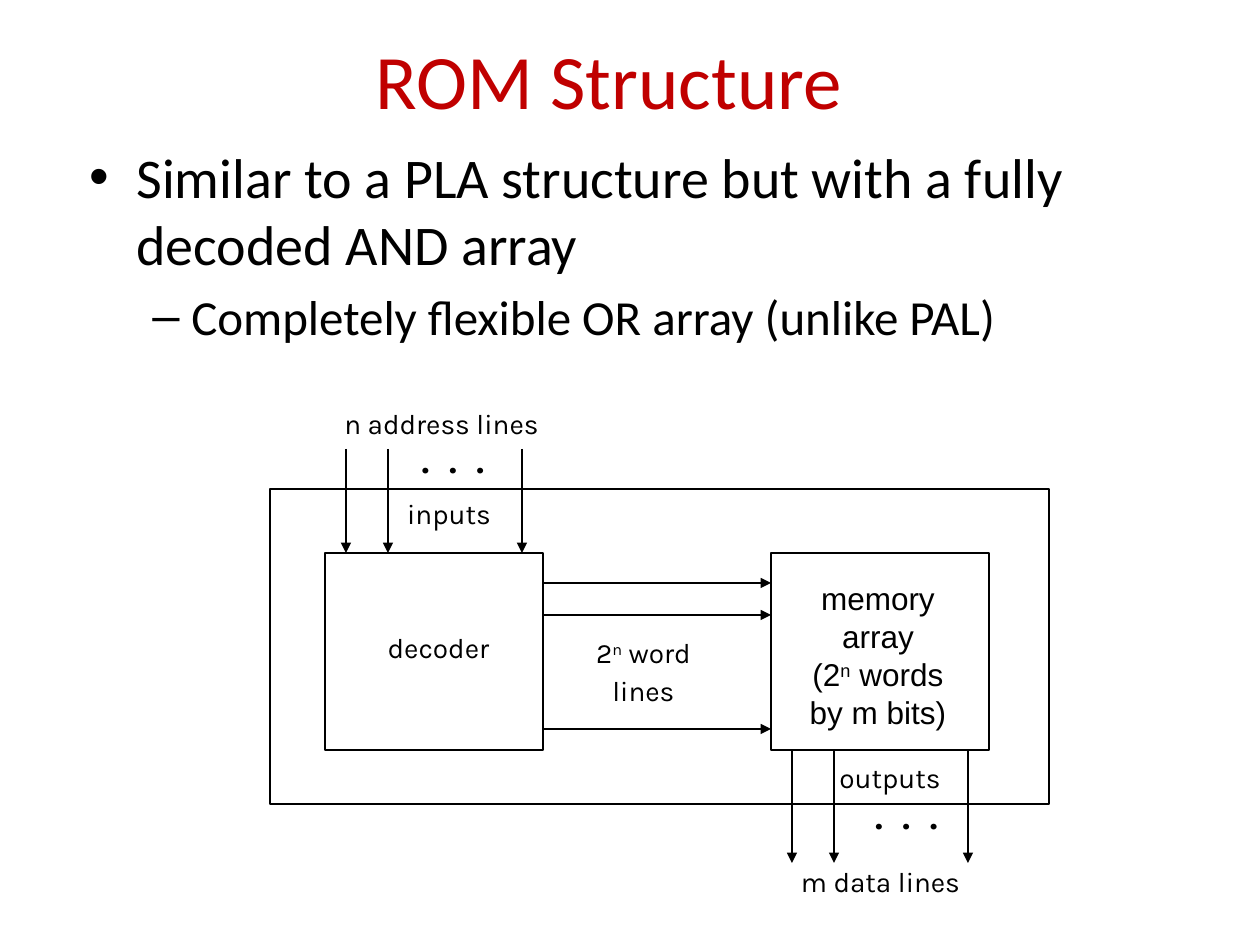
from dataclasses import dataclass

from lxml.etree import SubElement
from pptx import Presentation
from pptx.dml.color import RGBColor
from pptx.enum.shapes import MSO_CONNECTOR, MSO_SHAPE
from pptx.enum.text import MSO_ANCHOR, PP_ALIGN
from pptx.oxml.ns import qn
from pptx.util import Emu, Pt

PX = 914400 / 126


def emu(*px):
    """Turn px lengths into EMU."""
    return [Emu(round(v * PX)) for v in px]


@dataclass(frozen=True)
class Theme:
    """Colours, fonts and type sizes of the slide."""
    ink: RGBColor = RGBColor(0, 0, 0)
    accent: RGBColor = RGBColor(0xC0, 0, 0)
    text_font: str = "Calibri"
    label_font: str = "Karla"
    box_font: str = "Arial"
    title: int = 44
    body: tuple = (32, 28)
    label: int = 16
    box: int = 18
    line: int = 1


class Deck:
    """Draws styled elements on the current slide."""

    def __init__(self, prs, theme):
        self.theme = theme
        self.s = prs.slides.add_slide(prs.slide_layouts[5])

    def run(self, p, text, size, font, color=None):
        """Add one formatted run."""
        r = p.add_run()
        r.text = text
        r.font.size, r.font.name = Pt(size), font
        r.font.color.rgb = color or self.theme.ink
        return r

    def title(self, text, *box):
        """Place and fill the title placeholder."""
        sp = self.s.shapes.title
        sp.left, sp.top, sp.width, sp.height = emu(*box)
        tf = sp.text_frame
        tf.vertical_anchor = MSO_ANCHOR.MIDDLE
        p = tf.paragraphs[0]
        p.alignment = PP_ALIGN.CENTER
        self.run(p, text, self.theme.title, self.theme.text_font, self.theme.accent)

    def bullets(self, items, *box):
        """Add a bulleted list of (level, marker, margin, indent, text)."""
        tf = self.s.shapes.add_textbox(*emu(*box)).text_frame
        tf.word_wrap = True
        for i, (level, marker, margin, indent, text) in enumerate(items):
            p = tf.add_paragraph() if i else tf.paragraphs[0]
            size = self.theme.body[level]
            p.level, p.space_before = level, Pt(size * 0.2)
            pPr = p._p.get_or_add_pPr()
            for name, value in zip(("marL", "indent"), emu(margin, indent)):
                pPr.set(name, str(value))
            SubElement(pPr, qn("a:buFont"), typeface="Arial")
            SubElement(pPr, qn("a:buChar"), char=marker)
            self.run(p, text, size, self.theme.text_font)

    def label(self, parts, *box, size=None, font=None, tracking=0, leading=21.7):
        """Add a centred label whose every second part is superscript."""
        tf = self.s.shapes.add_textbox(*emu(*box)).text_frame
        tf.word_wrap = False
        tf.margin_left, tf.margin_right, tf.margin_top, tf.margin_bottom = emu(3, 3, 4, 4)
        p = tf.paragraphs[0]
        p.alignment, p.line_spacing = PP_ALIGN.CENTER, Pt(leading)
        for i, part in enumerate(parts):
            for j, text in enumerate(part.split("\n")):
                if j:
                    p.add_line_break()
                r = self.run(p, text, size or self.theme.label, font or self.theme.label_font)
                rPr = r._r.get_or_add_rPr()
                if i % 2:
                    rPr.set("baseline", "30000")
                if tracking:
                    rPr.set("spc", str(tracking))

    def dots(self, *box):
        """Add a row of three spaced dots."""
        self.label(["• • •"], *box, tracking=375, leading=20.7)

    def box(self, *box):
        """Add an unfilled outlined rectangle."""
        sp = self.s.shapes.add_shape(MSO_SHAPE.RECTANGLE, *emu(*box))
        sp.shadow.inherit = False
        sp.fill.background()
        sp.line.color.rgb, sp.line.width = self.theme.ink, Pt(self.theme.line)

    def arrow(self, *ends):
        """Add a straight arrow given by its two ends."""
        c = self.s.shapes.add_connector(MSO_CONNECTOR.STRAIGHT, *emu(*ends))
        c.line.color.rgb, c.line.width = self.theme.ink, Pt(self.theme.line)
        SubElement(c.line._get_or_add_ln(), qn("a:tailEnd"), type="triangle")
        SubElement(c._element.spPr, qn("a:effectLst"))


def main():
    """Build the ROM structure slide."""
    prs = Presentation()
    prs.slide_width, prs.slide_height = emu(1260, 945)
    theme = Theme()
    d = Deck(prs, theme)

    d.title("ROM Structure", 42, 0, 1134, 158)
    d.bullets([
        (0, "•", 47, -47, "Similar to a PLA structure but with a fully decoded AND array"),
        (1, "–", 102, -39, "Completely flexible OR array (unlike PAL)"),
    ], 77, 136, 1134, 624)

    decoder, memory, top, width, height = 325, 771, 553, 218, 197
    bottom = top + height
    d.box(270, 489, 779, 315)
    for left in (decoder, memory):
        d.box(left, top, width, height)
    for dx in (21, 63, 197):
        d.arrow(decoder + dx, 449, decoder + dx, top)
        d.arrow(memory + dx, bottom, memory + dx, 863)
    for dy in (30, 62, 176):
        d.arrow(decoder + width, top + dy, memory, top + dy)

    d.label(["n address lines"], 304, 398, 275, 89)
    d.dots(393, 444, 120, 54)
    d.label(["inputs"], 386, 488, 126, 89)
    d.label(["decoder"], 364, 622, 149, 77)
    d.label(["2", "n", " word\nlines"], 544, 627, 199, 127)
    d.label(["memory\narray\n(2", "n", " words\nby m bits)"], 752, 575, 252, 127,
            size=theme.box, font=theme.box_font)
    d.label(["outputs"], 810, 752, 160, 89)
    d.dots(832, 800, 149, 54)
    d.label(["m data lines"], 743, 856, 275, 89)

    prs.save("out.pptx")


if __name__ == "__main__":
    main()
